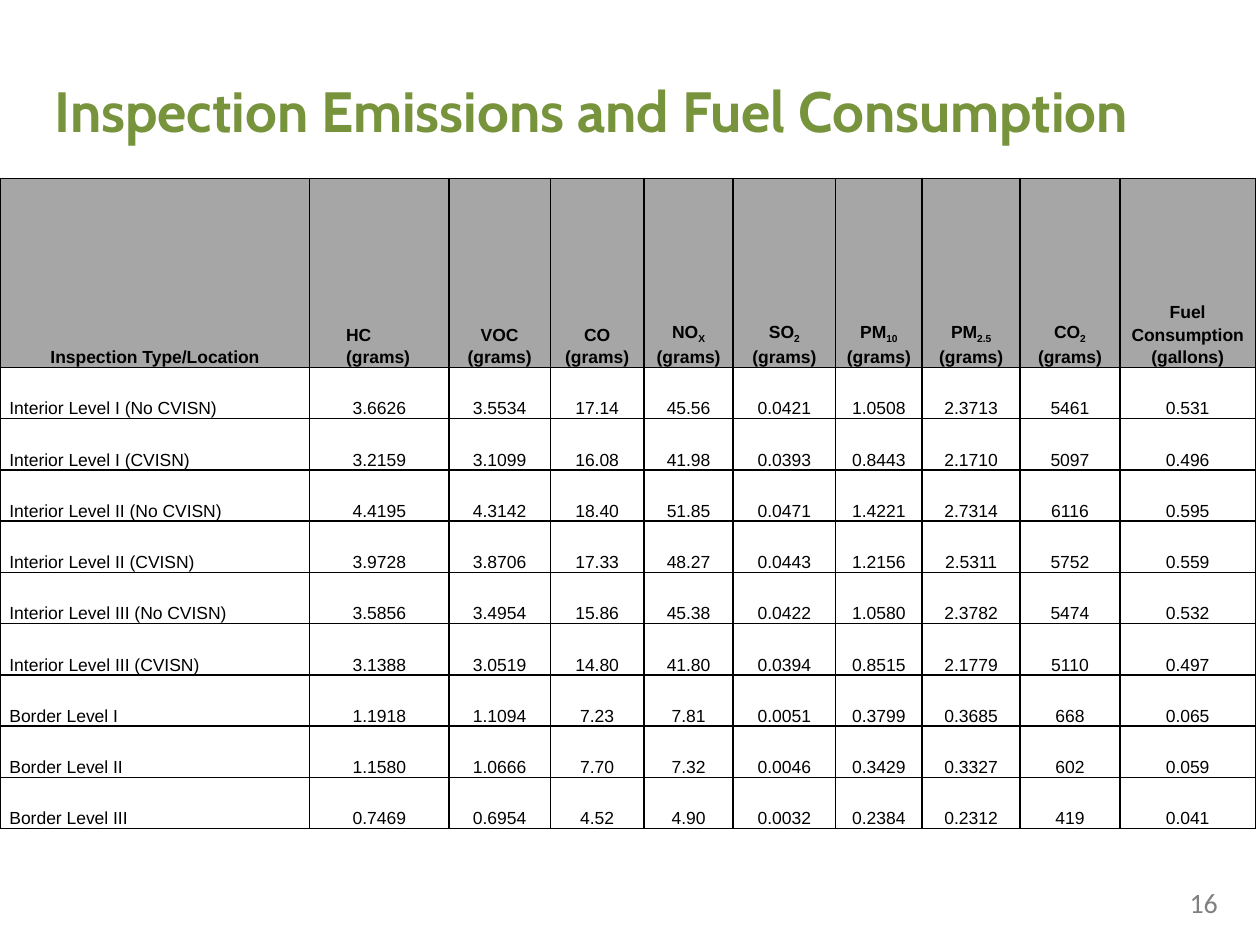
from lxml import etree
from pptx import Presentation
from pptx.dml.color import RGBColor
from pptx.enum.text import MSO_ANCHOR, MSO_AUTO_SIZE, PP_ALIGN
from pptx.oxml.ns import qn
from pptx.util import Pt

LEFT, CENTER, RIGHT = PP_ALIGN.LEFT, PP_ALIGN.CENTER, PP_ALIGN.RIGHT
MIDDLE, BOTTOM = MSO_ANCHOR.MIDDLE, MSO_ANCHOR.BOTTOM
NO_AUTOFIT = MSO_AUTO_SIZE.NONE
TITLE_ONLY = 5

COLUMN_WIDTHS = [177, 79.5, 58, 53.5, 51, 58.5, 49.5, 56, 57, 77.5]
HEADER_HEIGHT, ROW_HEIGHT = 108, 29.3
HC_COLUMN, HC_INDENT = 1, 15.4

# Text between underscores is subscript
HEADERS = [
    "Inspection Type/Location", "HC\v(grams)", "VOC (grams)", "CO (grams)",
    "NO_X_ (grams)", "SO_2_ (grams)", "PM_10_ (grams)", "PM_2.5_ (grams)",
    "CO_2_ (grams)", "Fuel Consumption (gallons)",
]
ROWS = [
    ("Interior Level I (No CVISN)", "3.6626 3.5534 17.14 45.56 0.0421 1.0508 2.3713 5461 0.531"),
    ("Interior Level I (CVISN)", "3.2159 3.1099 16.08 41.98 0.0393 0.8443 2.1710 5097 0.496"),
    ("Interior Level II (No CVISN)", "4.4195 4.3142 18.40 51.85 0.0471 1.4221 2.7314 6116 0.595"),
    ("Interior Level II (CVISN)", "3.9728 3.8706 17.33 48.27 0.0443 1.2156 2.5311 5752 0.559"),
    ("Interior Level III (No CVISN)", "3.5856 3.4954 15.86 45.38 0.0422 1.0580 2.3782 5474 0.532"),
    ("Interior Level III (CVISN)", "3.1388 3.0519 14.80 41.80 0.0394 0.8515 2.1779 5110 0.497"),
    ("Border Level I", "1.1918 1.1094 7.23 7.81 0.0051 0.3799 0.3685 668 0.065"),
    ("Border Level II", "1.1580 1.0666 7.70 7.32 0.0046 0.3429 0.3327 602 0.059"),
    ("Border Level III", "0.7469 0.6954 4.52 4.90 0.0032 0.2384 0.2312 419 0.041"),
]


def color(value):
    return RGBColor.from_string(value)


class SlideBuilder:
    title_color, number_color = "77933C", "808080"
    text_color, header_fill, border_color = "000000", "A6A6A6", "000000"

    def __init__(self, prs):
        self.s = prs.slides.add_slide(prs.slide_layouts[TITLE_ONLY])

    def style(self, p, name, size, fill, bold=False, align=LEFT):
        p.alignment = align
        p.font.name, p.font.size, p.font.bold = name, Pt(size), bold
        p.font.color.rgb = color(fill)

    def title(self, text, x, y, w, h):
        sp = self.s.shapes.title
        sp.left, sp.top, sp.width, sp.height = Pt(x), Pt(y), Pt(w), Pt(h)
        tf = sp.text_frame
        tf.text = text
        tf.auto_size, tf.vertical_anchor = NO_AUTOFIT, MIDDLE
        self.style(tf.paragraphs[0], "Cabin", 32.4, self.title_color, True)

    def page_number(self, text, x, y, w, h):
        tf = self.s.shapes.add_textbox(Pt(x), Pt(y), Pt(w), Pt(h)).text_frame
        tf.word_wrap = True
        tf.text = text
        self.style(tf.paragraphs[0], "Calibri", 16, self.number_color, align=RIGHT)

    def borders(self, cell):
        tcPr = cell._tc.get_or_add_tcPr()
        for i, side in enumerate(("a:lnL", "a:lnR", "a:lnT", "a:lnB")):
            ln = etree.Element(qn(side), w=str(Pt(1)))
            fill = etree.SubElement(ln, qn("a:solidFill"))
            etree.SubElement(fill, qn("a:srgbClr"), val=self.border_color)
            tcPr.insert(i, ln)

    def cell(self, cell, text, header, align):
        cell.vertical_anchor = BOTTOM
        cell.margin_left = cell.margin_right = Pt(5.4)
        cell.margin_top = cell.margin_bottom = 0
        if header:
            cell.fill.solid()
            cell.fill.fore_color.rgb = color(self.header_fill)
        else:
            cell.fill.background()
        self.borders(cell)
        p = cell.text_frame.paragraphs[0]
        if "_" in text:
            for i, part in enumerate(text.split("_")):
                r = p.add_run()
                r.text = part
                if i % 2:
                    r._r.get_or_add_rPr().set("baseline", "-25000")
        else:
            p.text = text
        p.line_spacing = 1.15
        self.style(p, "Arial", 10, self.text_color, header, align)
        return p

    def table(self, headers, rows, x, y):
        height = HEADER_HEIGHT + ROW_HEIGHT * len(rows)
        table = self.s.shapes.add_table(
            len(rows) + 1, len(headers), Pt(x), Pt(y),
            Pt(sum(COLUMN_WIDTHS)), Pt(height)).table
        table.horz_banding = False
        for column, width in zip(table.columns, COLUMN_WIDTHS):
            column.width = Pt(width)
        lines = [headers] + [[label, *values.split()] for label, values in rows]
        for i, line in enumerate(lines):
            header = i == 0
            table.rows[i].height = Pt(HEADER_HEIGHT if header else ROW_HEIGHT)
            for j, text in enumerate(line):
                align = CENTER if header or j else LEFT
                self.cell(table.cell(i, j), text, header, align)
        # The HC heading is indented rather than centred
        p = table.cell(0, HC_COLUMN).text_frame.paragraphs[0]
        p.alignment = LEFT
        p._p.get_or_add_pPr().set("marL", str(Pt(HC_INDENT)))


def main():
    prs = Presentation()
    prs.slide_width, prs.slide_height = Pt(720), Pt(540)
    slide = SlideBuilder(prs)
    slide.title("Inspection Emissions and Fuel Consumption", 24, 18, 684, 90)
    slide.table(HEADERS, ROWS, 0, 102)
    slide.page_number("16", 667, 502.5, 36, 26.6)
    prs.save("out.pptx")


if __name__ == "__main__":
    main()
